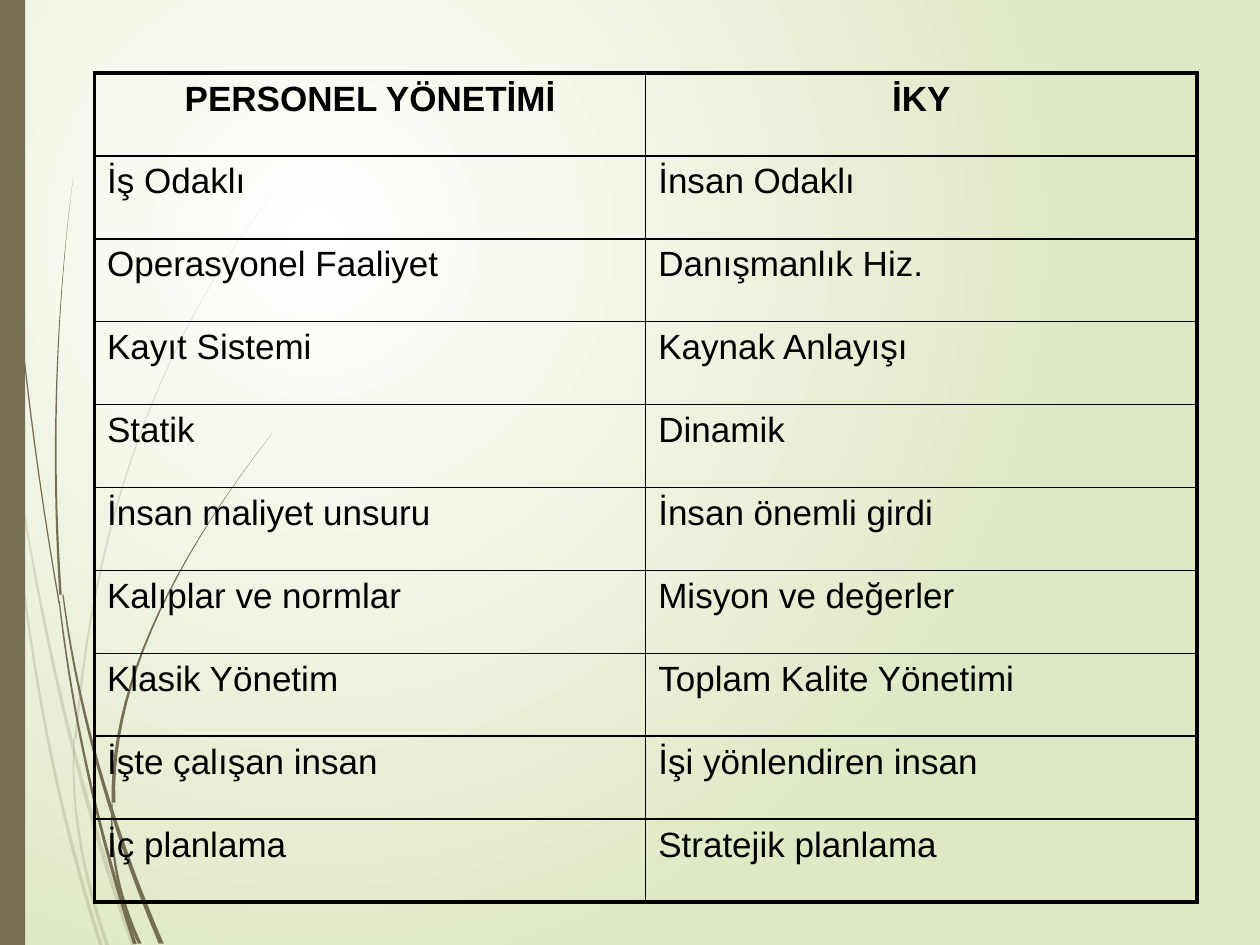
from lxml.etree import SubElement
from pptx import Presentation
from pptx.dml.color import RGBColor
from pptx.enum.shapes import MSO_SHAPE
from pptx.enum.text import PP_ALIGN
from pptx.oxml.ns import qn
from pptx.util import Pt

PX = 9144
WIDTH, HEIGHT = 1000, 750
BLACK = RGBColor(0x00, 0x00, 0x00)
WHITE = RGBColor(0xFF, 0xFF, 0xFF)
PALE_GREEN = RGBColor(0xDF, 0xE8, 0xC4)
BROWN = RGBColor(0x76, 0x6F, 0x54)
FONT = "Arial"
CURVE_STEPS = 20
THIN, THICK = Pt(1), Pt(2.25)

ROWS = [
    ("PERSONEL YÖNETİMİ", "İKY"),
    ("İş Odaklı", "İnsan Odaklı"),
    ("Operasyonel Faaliyet", "Danışmanlık Hiz."),
    ("Kayıt Sistemi", "Kaynak Anlayışı"),
    ("Statik", "Dinamik"),
    ("İnsan maliyet unsuru", "İnsan önemli girdi"),
    ("Kalıplar ve normlar", "Misyon ve değerler"),
    ("Klasik Yönetim", "Toplam Kalite Yönetimi"),
    ("İşte çalışan insan", "İşi yönlendiren insan"),
    ("İç planlama", "Stratejik planlama"),
]

# Start, middle and end of the centre line, then the width at each end.
PALE_BLADES = [
    ((1, 137), (4, 164), (8, 197), 2, 1),
    ((8, 197), (33, 407), (80, 597), 1, 3),
    ((10, 195), (51, 412), (106, 597), 1, 4),
    ((217, 0), (110, 195), (60, 433), 0, 2),
    ((59, 433), (63, 511), (85, 597), 1, 3),
]
DARK_BLADES = [
    ((3, 0), (14, 233), (47, 479), 1, 1),
    ((47, 477), (70, 614), (107, 749), 1, 3),
    ((50, 472), (78, 608), (128, 749), 1, 4),
    ((58, 141), (45, 306), (48, 472), 0, 2),
    ((216, 344), (120, 500), (90, 637), 0, 3),
    ((89, 638), (93, 694), (111, 749), 1, 3),
]


def paint_background(slide):
    fill = slide.background.fill
    fill.gradient()
    for stop, color in zip(fill.gradient_stops, (WHITE, PALE_GREEN)):
        stop.color.rgb = color
    gradient = slide.element.find(".//" + qn("a:gradFill"))
    gradient.remove(gradient.find(qn("a:lin")))
    circle = SubElement(gradient, qn("a:path"), {"path": "circle"})
    SubElement(circle, qn("a:fillToRect"), {"l": "50000", "t": "50000", "r": "100000", "b": "100000"})


def paint_shape(shape, opacity=100):
    shape.shadow.inherit = False
    shape.fill.solid()
    shape.fill.fore_color.rgb = BROWN
    shape.line.fill.background()
    if opacity < 100:
        color = shape.element.spPr.find(qn("a:solidFill"))[0]
        SubElement(color, qn("a:alpha"), {"val": str(opacity * 1000)})


def blade_outline(start, middle, end, start_width, end_width):
    left_edge, right_edge = [], []
    for step in range(CURVE_STEPS + 1):
        t = step / CURVE_STEPS
        weights = ((1 - t) * (1 - 2 * t), 4 * t * (1 - t), t * (2 * t - 1))
        x, y = (sum(weight * value for weight, value in zip(weights, values)) for values in zip(start, middle, end))
        half = (start_width + (end_width - start_width) * t) / 2
        left_edge.append((x - half, y))
        right_edge.append((x + half, y))
    return left_edge + right_edge[::-1]


def add_blades(slide, left, top, blades, opacity=100):
    group = slide.shapes.add_group_shape()
    for blade in blades:
        outline = [((left + x) * PX, (top + y) * PX) for x, y in blade_outline(*blade)]
        builder = group.shapes.build_freeform(*outline[0])
        builder.add_line_segments(outline[1:], close=True)
        paint_shape(builder.convert_to_shape(), opacity)


def add_side_bar(slide, left, top, width, height):
    bar = slide.shapes.add_shape(MSO_SHAPE.RECTANGLE, left * PX, top * PX, width * PX, height * PX)
    paint_shape(bar)


def set_borders(cell, widths):
    properties = cell._tc.get_or_add_tcPr()
    for position, (side, width) in enumerate(zip(("lnL", "lnR", "lnT", "lnB"), widths)):
        line = SubElement(properties, qn(f"a:{side}"), {"w": str(width)})
        fill = SubElement(line, qn("a:solidFill"))
        SubElement(fill, qn("a:srgbClr"), {"val": str(BLACK)})
        properties.insert(position, line)


def add_comparison_table(slide, left, top, width, height):
    last_row, last_column = len(ROWS) - 1, len(ROWS[0]) - 1
    frame = slide.shapes.add_table(len(ROWS), len(ROWS[0]), left * PX, top * PX, width * PX, height * PX)
    table = frame.table
    table.first_row = table.horz_banding = False
    for row, texts in enumerate(ROWS):
        for column, text in enumerate(texts):
            cell = table.cell(row, column)
            cell.text = text
            cell.fill.background()
            edges = (column == 0, column == last_column, row == 0, row == last_row)
            set_borders(cell, [THICK if outer else THIN for outer in edges])
            paragraph = cell.text_frame.paragraphs[0]
            paragraph.alignment = PP_ALIGN.CENTER if row == 0 else PP_ALIGN.LEFT
            paragraph.font.name = FONT
            paragraph.font.size = Pt(20)
            paragraph.font.bold = row == 0
            paragraph.font.color.rgb = BLACK


def main():
    presentation = Presentation()
    presentation.slide_width = WIDTH * PX
    presentation.slide_height = HEIGHT * PX
    slide = presentation.slides.add_slide(presentation.slide_layouts[6])
    paint_background(slide)
    add_blades(slide, 0, 153, PALE_BLADES, opacity=20)
    add_blades(slide, 0, 0, DARK_BLADES)
    add_side_bar(slide, 0, 0, 20, HEIGHT)
    add_comparison_table(slide, 75, 58, 875, 658)
    presentation.save("out.pptx")


if __name__ == "__main__":
    main()
